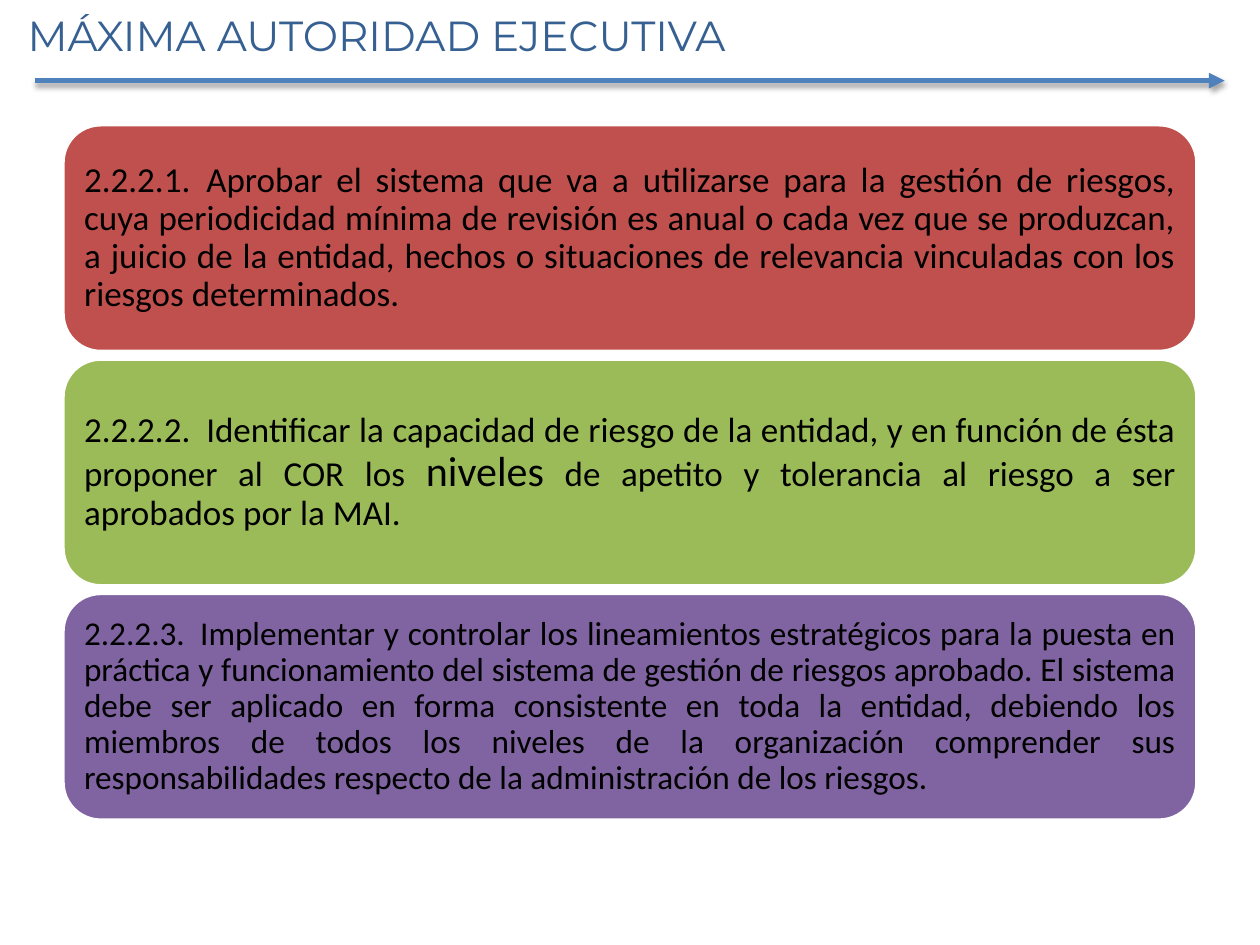
from dataclasses import dataclass

import pptx
import pptx.dml.color
import pptx.enum.shapes
import pptx.enum.text
import pptx.oxml
import pptx.oxml.ns
import pptx.util

RGBColor = pptx.dml.color.RGBColor
Inches = pptx.util.Inches
Pt = pptx.util.Pt

RED = RGBColor(0xC0, 0x50, 0x4D)
GREEN = RGBColor(0x9B, 0xBB, 0x59)
PURPLE = RGBColor(0x80, 0x64, 0xA2)
BLUE = RGBColor(0x4F, 0x81, 0xBD)
TITLE_BLUE = RGBColor(0x37, 0x60, 0x92)
WHITE = RGBColor(0xFF, 0xFF, 0xFF)
BLACK = RGBColor(0x00, 0x00, 0x00)

WIDTH, HEIGHT = 10, 7.5

# Column of cards, as shares of the slide
CARD_LEFT = 0.05 * WIDTH
CARD_WIDTH = 0.9 * WIDTH
CARD_TOP = 0.132 * HEIGHT
CARD_HEIGHT = 0.24 * HEIGHT
CARD_STEP = 0.248 * HEIGHT
CARD_MARGIN = 0.08
TAB_PER_POINT = 0.97 / 20


@dataclass(frozen=True)
class Span:
    text: str
    size: int


@dataclass(frozen=True)
class Duty:
    fill: RGBColor
    spans: tuple[Span, ...]


DUTIES = (
    Duty(RED, (
        Span("2.2.2.1.\tAprobar el sistema que va a utilizarse para la gestión de riesgos, "
             "cuya periodicidad mínima de revisión es anual o cada vez que se produzcan, "
             "a juicio de la entidad, hechos o situaciones de relevancia vinculadas con "
             "los riesgos determinados.", 20),
    )),
    Duty(GREEN, (
        Span("2.2.2.2.\tIdentificar la capacidad de riesgo de la entidad, y en función "
             "de ésta proponer al COR los ", 20),
        Span("niveles", 24),
        Span(" de apetito y tolerancia al riesgo a ser aprobados por la MAI.", 20),
    )),
    Duty(PURPLE, (
        Span("2.2.2.3.\tImplementar y controlar los lineamientos estratégicos para la "
             "puesta en práctica y funcionamiento del sistema de gestión de riesgos "
             "aprobado. El sistema debe ser aplicado en forma consistente en toda la "
             "entidad, debiendo los miembros de todos los niveles de la organización "
             "comprender sus responsabilidades respecto de la administración de los "
             "riesgos.", 19),
    )),
)


def add_xml(parent, tag: str, **attributes):
    """Append a DrawingML element with the given attributes."""
    element = pptx.oxml.parse_xml(f"<a:{tag} {pptx.oxml.ns.nsdecls('a')}/>")
    for name, value in attributes.items():
        element.set(name, str(value))
    parent.append(element)
    return element


def add_title(page, text: str) -> None:
    box = page.shapes.add_textbox(Inches(0.12), Inches(0.03), Inches(9.45), Inches(0.5))
    box.text_frame.word_wrap = True
    para = box.text_frame.paragraphs[0]
    para.text = text
    para.font.size = Pt(24)
    para.font.name = "Montserrat"
    para.font.color.rgb = TITLE_BLUE


def add_title_arrow(page) -> None:
    margin, top = Inches(0.28), Inches(0.64)
    arrow = page.shapes.add_connector(
        pptx.enum.shapes.MSO_CONNECTOR.STRAIGHT, margin, top, Inches(WIDTH) - margin, top)
    arrow.line.color.rgb = BLUE
    arrow.line.width = Pt(3)
    add_xml(arrow.line._get_or_add_ln(), "tailEnd", type="triangle")
    # Soft shadow straight below the line
    effects = add_xml(arrow._element.spPr, "effectLst")
    shadow = add_xml(effects, "outerShdw", blurRad=Pt(3.1), dist=Pt(1.8),
                     dir=90 * 60000, rotWithShape=0)
    colour = add_xml(shadow, "srgbClr", val=BLACK)
    add_xml(colour, "alpha", val=35000)


def add_card(page, row: int, duty: Duty) -> None:
    card = page.shapes.add_shape(
        pptx.enum.shapes.MSO_SHAPE.ROUNDED_RECTANGLE,
        Inches(CARD_LEFT), Inches(CARD_TOP + row * CARD_STEP),
        Inches(CARD_WIDTH), Inches(CARD_HEIGHT))
    card.shadow.inherit = False
    card.fill.solid()
    card.fill.fore_color.rgb = duty.fill
    card.line.color.rgb = WHITE
    card.line.width = Pt(2)

    frame = card.text_frame
    frame.word_wrap = True
    frame.vertical_anchor = pptx.enum.text.MSO_ANCHOR.MIDDLE
    frame.margin_left = frame.margin_right = Inches(CARD_MARGIN)
    frame.margin_top = frame.margin_bottom = Inches(CARD_MARGIN)

    size = duty.spans[0].size
    para = frame.paragraphs[0]
    para.alignment = pptx.enum.text.PP_ALIGN.JUSTIFY
    para.line_spacing = 0.9
    para.space_after = Pt(0.35 * size)
    # The tab after the number grows with the text size
    tabs = add_xml(para._p.get_or_add_pPr(), "tabLst")
    add_xml(tabs, "tab", pos=Inches(TAB_PER_POINT * size), algn="l")
    para.font.name = "Calibri"
    para.font.color.rgb = BLACK
    for span in duty.spans:
        run = para.add_run()
        run.text = span.text
        run.font.size = Pt(span.size)


def main() -> None:
    deck = pptx.Presentation()
    deck.slide_width, deck.slide_height = Inches(WIDTH), Inches(HEIGHT)
    page = deck.slides.add_slide(deck.slide_layouts[6])
    for row, duty in enumerate(DUTIES):
        add_card(page, row, duty)
    add_title_arrow(page)
    add_title(page, "MÁXIMA AUTORIDAD EJECUTIVA")
    deck.save("out.pptx")


if __name__ == "__main__":
    main()
